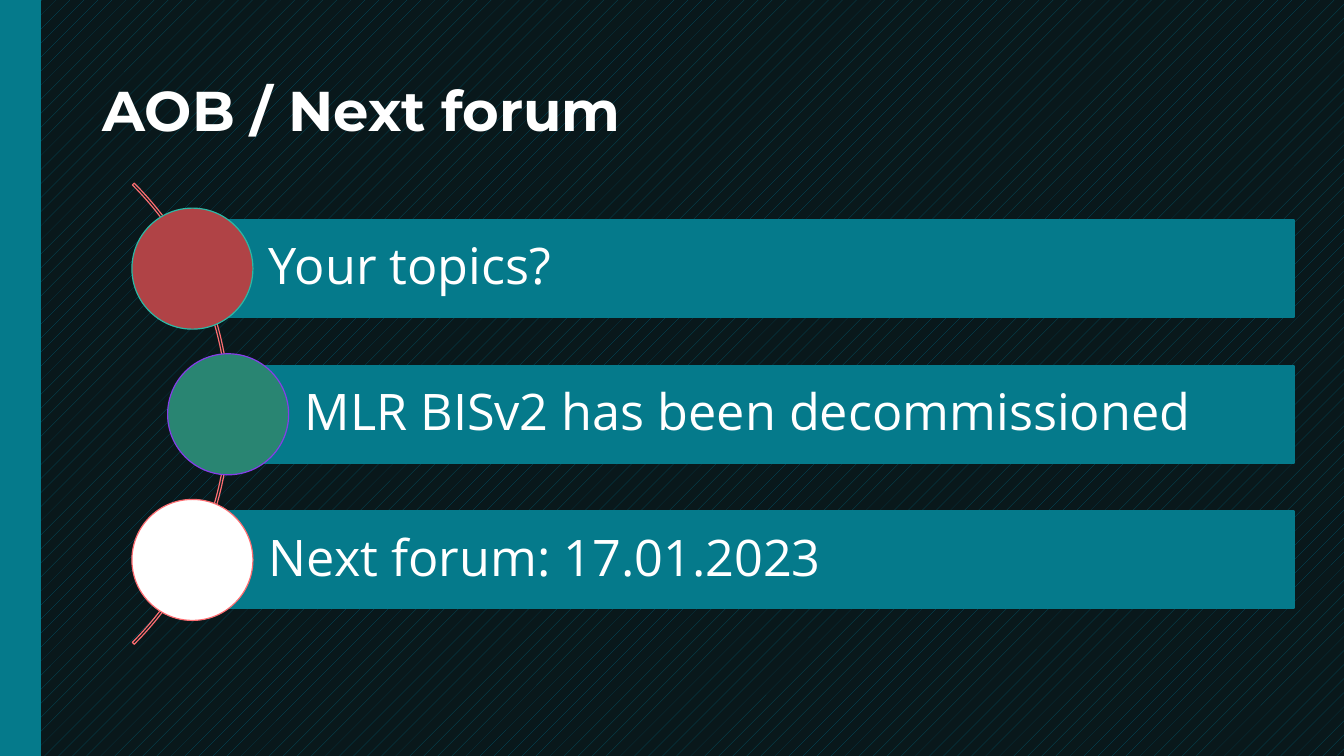
"""Build the closing slide of the forum: any other business and the next date."""
from dataclasses import dataclass

import pptx
import pptx.dml.color
import pptx.enum.dml
import pptx.enum.shapes
import pptx.enum.text
import pptx.oxml
import pptx.util

Cm = pptx.util.Cm
Pt = pptx.util.Pt
SHAPES = pptx.enum.shapes.MSO_SHAPE

TEAL = "057A8B"
CORAL = "FC6D71"
WHITE = "FFFFFF"

BAR_RIGHT = 32.61
BAR_HEIGHT = 2.44
CIRCLE_SIZE = 3.05
FIRST_MIDDLE = 6.77
PITCH = 3.67


@dataclass
class Topic:
    text: str
    center: float
    fill: str
    outline: str


TOPICS = [
    Topic("Your topics?", 4.85, "B04346", "2CB8A5"),
    Topic("MLR BISv2 has been decommissioned", 5.75, "298572", "853EE8"),
    Topic("Next forum: 17.01.2023", 4.85, WHITE, CORAL),
]


def paint(color, value: str) -> None:
    color.rgb = pptx.dml.color.RGBColor.from_string(value)


def add_figure(page, kind, left: float, top: float, width: float, height: float,
               fill: str | None, outline: str, weight: float):
    figure = page.shapes.add_shape(kind, Cm(left), Cm(top), Cm(width), Cm(height))
    figure.shadow.inherit = False
    if fill is None:
        figure.fill.background()
    else:
        figure.fill.solid()
        paint(figure.fill.fore_color, fill)
    paint(figure.line.color, outline)
    figure.line.width = Pt(weight)
    return figure


def write(box, text: str, font: str, size: float, bold: bool = False) -> None:
    frame = box.text_frame
    frame.word_wrap = True
    frame.auto_size = pptx.enum.text.MSO_AUTO_SIZE.NONE
    frame.vertical_anchor = pptx.enum.text.MSO_ANCHOR.MIDDLE
    para = frame.paragraphs[0]
    para.alignment = pptx.enum.text.PP_ALIGN.LEFT
    para.line_spacing = 0.9
    span = para.add_run()
    span.text = text
    span.font.name = font
    span.font.size = Pt(size)
    span.font.bold = bold
    paint(span.font.color, WHITE)


def add_background(page) -> None:
    fill = page.background.fill
    fill.patterned()
    fill.pattern = pptx.enum.dml.MSO_PATTERN.PERCENT_5
    paint(fill.fore_color, "00566B")
    paint(fill.back_color, "09181B")


def add_side_stripe(page, height: int) -> None:
    stripe = page.shapes.add_connector(
        pptx.enum.shapes.MSO_CONNECTOR.STRAIGHT, Cm(0.51), 0, Cm(0.51), height)
    paint(stripe.line.color, TEAL)
    stripe.line.width = Pt(30)
    properties = stripe._element.spPr
    properties.append(pptx.oxml.parse_xml(
        '<a:effectLst xmlns:a="http://schemas.openxmlformats.org/drawingml/2006/main"/>'))


def add_title(page) -> None:
    title = page.shapes.title
    title.left, title.top = Cm(2.33), Cm(1.01)
    title.width, title.height = Cm(29.21), Cm(3.68)
    write(title, "AOB / Next forum", "Montserrat", 40, bold=True)


def add_arc(page) -> None:
    arc = add_figure(page, SHAPES.BLOCK_ARC, -10.64, 2.21, 16.43, 16.43, None, CORAL, 0.85)
    for index, value in enumerate((189, 27, 0.004)):
        arc.adjustments[index] = value


def add_topic(page, topic: Topic, middle: float) -> None:
    bar = add_figure(page, SHAPES.RECTANGLE, topic.center, middle - BAR_HEIGHT / 2,
                     BAR_RIGHT - topic.center, BAR_HEIGHT, TEAL, TEAL, 1.5)
    bar.text_frame.margin_left = Cm(1.93)
    write(bar, topic.text, "Open Sans", 36)
    add_figure(page, SHAPES.OVAL, topic.center - CIRCLE_SIZE / 2, middle - CIRCLE_SIZE / 2,
               CIRCLE_SIZE, CIRCLE_SIZE, topic.fill, topic.outline, 0.85)


def main() -> None:
    deck = pptx.Presentation()
    deck.slide_width, deck.slide_height = Cm(33.87), Cm(19.05)
    page = deck.slides.add_slide(deck.slide_layouts.get_by_name("Title Only"))
    add_background(page)
    add_side_stripe(page, deck.slide_height)
    add_title(page)
    add_arc(page)
    for index, topic in enumerate(TOPICS):
        add_topic(page, topic, FIRST_MIDDLE + index * PITCH)
    deck.save("out.pptx")


if __name__ == "__main__":
    main()
